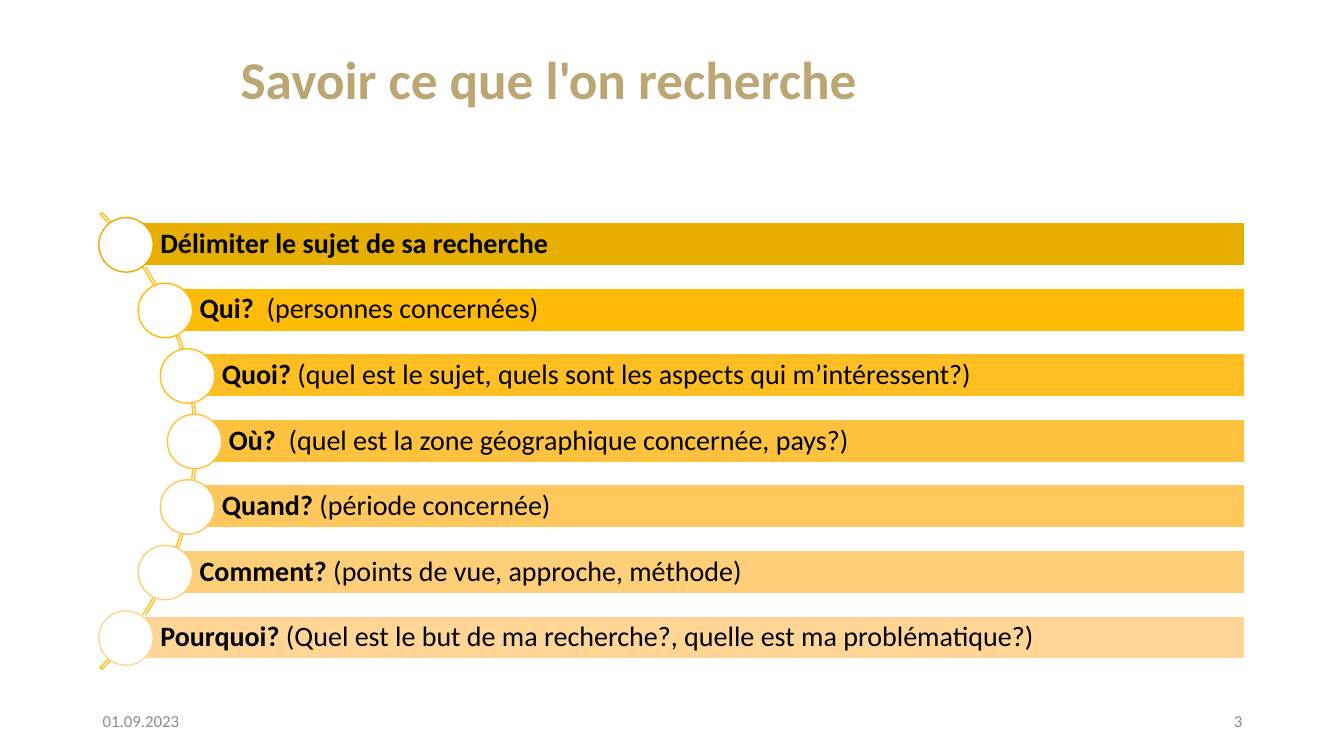
import pptx
import pptx.util
import pptx.dml.color
import pptx.enum.shapes
import pptx.enum.text

SHAPE = pptx.enum.shapes.MSO_SHAPE
ALIGN = pptx.enum.text.PP_ALIGN
MIDDLE = pptx.enum.text.MSO_ANCHOR.MIDDLE
HUES = {"white": "FFFFFF", "black": "000000", "title": "BCA673",
        "foot": "8C8C8C", "arc": "FFC122"}


class Deck:
    """Holds the style and the current slide, and draws each kind of element."""

    font = "Calibri"
    scale = 9144

    def __init__(self, width, height):
        self.file = pptx.Presentation()
        self.file.slide_width, self.file.slide_height = self.px(width, height)
        self.slide = self.file.slides.add_slide(self.file.slide_layouts[6])

    def px(self, *sizes):
        return [size * self.scale for size in sizes]

    def color(self, name):
        return pptx.dml.color.RGBColor.from_string(HUES.get(name, name))

    def shape(self, kind, box, line, fill=None):
        item = self.slide.shapes.add_shape(kind, *self.px(*box))
        item.shadow.inherit = False
        if fill:
            item.fill.solid()
            item.fill.fore_color.rgb = self.color(fill)
        else:
            item.fill.background()
        item.line.color.rgb = self.color(line)
        item.line.width = pptx.util.Pt(1)
        return item

    def label(self, item, words, size, color, align=ALIGN.LEFT):
        frame = item.text_frame
        frame.word_wrap = True
        frame.vertical_anchor = MIDDLE
        para = frame.paragraphs[0]
        para.alignment = align
        para.font.name = self.font
        para.font.size = pptx.util.Pt(size)
        para.font.color.rgb = self.color(color)
        for text, bold in words:
            run = para.add_run()
            run.text = text
            run.font.bold = bold
        return frame

    def text(self, box, text, size, color, align=ALIGN.LEFT, bold=False):
        item = self.slide.shapes.add_textbox(*self.px(*box))
        return self.label(item, [(text, bold)], size, color, align)

    def arc(self, box, line, adjust):
        item = self.shape(SHAPE.BLOCK_ARC, box, line)
        for index, value in enumerate(adjust):
            item.adjustments[index] = value

    def step(self, left, top, right, color, head, tail):
        bar = self.shape(SHAPE.RECTANGLE, (left, top, right - left, 43), "white", color)
        words = [(head, True)] + ([(tail, False)] if tail else [])
        frame = self.label(bar, words, 20, "black")
        frame.paragraphs[0].line_spacing = 0.9
        (frame.margin_left, frame.margin_top,
         frame.margin_right, frame.margin_bottom) = self.px(34, 6, 6, 6)
        self.shape(SHAPE.OVAL, (left - 27, top - 5, 54, 54), color, "white")


STEPS = [
    (125, "E7AE00", "Délimiter le sujet de sa recherche", ""),
    (164, "FFBB05", "Qui?", "  (personnes concernées)"),
    (186, "FFBE22", "Quoi?", " (quel est le sujet, quels sont les aspects qui m’intéressent?)"),
    (193, "FFC23F", "Où?", "  (quel est la zone géographique concernée, pays?)"),
    (186, "FFC75C", "Quand?", " (période concernée)"),
    (164, "FFCE78", "Comment?", " (points de vue, approche, méthode)"),
    (125, "FFD695", "Pourquoi?", " (Quel est le but de ma recherche?, quelle est ma problématique?)"),
]


def main():
    deck = Deck(1333, 750)
    title = deck.text((186, 11, 717, 142), "Savoir ce que l'on recherche",
                      38, "title", ALIGN.CENTER, True)
    title.paragraphs[0].line_spacing = 0.9
    deck.arc((-446, 117, 641, 641), "arc", (189, 27, 0.004))
    for index, (left, color, head, tail) in enumerate(STEPS):
        deck.step(left, 221 + 65 * index, 1235, color, head, tail)
    deck.text((92, 695, 300, 40), "01.09.2023", 12, "foot")
    deck.text((942, 695, 300, 40), "3", 12, "foot", ALIGN.RIGHT)
    deck.file.save("out.pptx")


if __name__ == "__main__":
    main()
